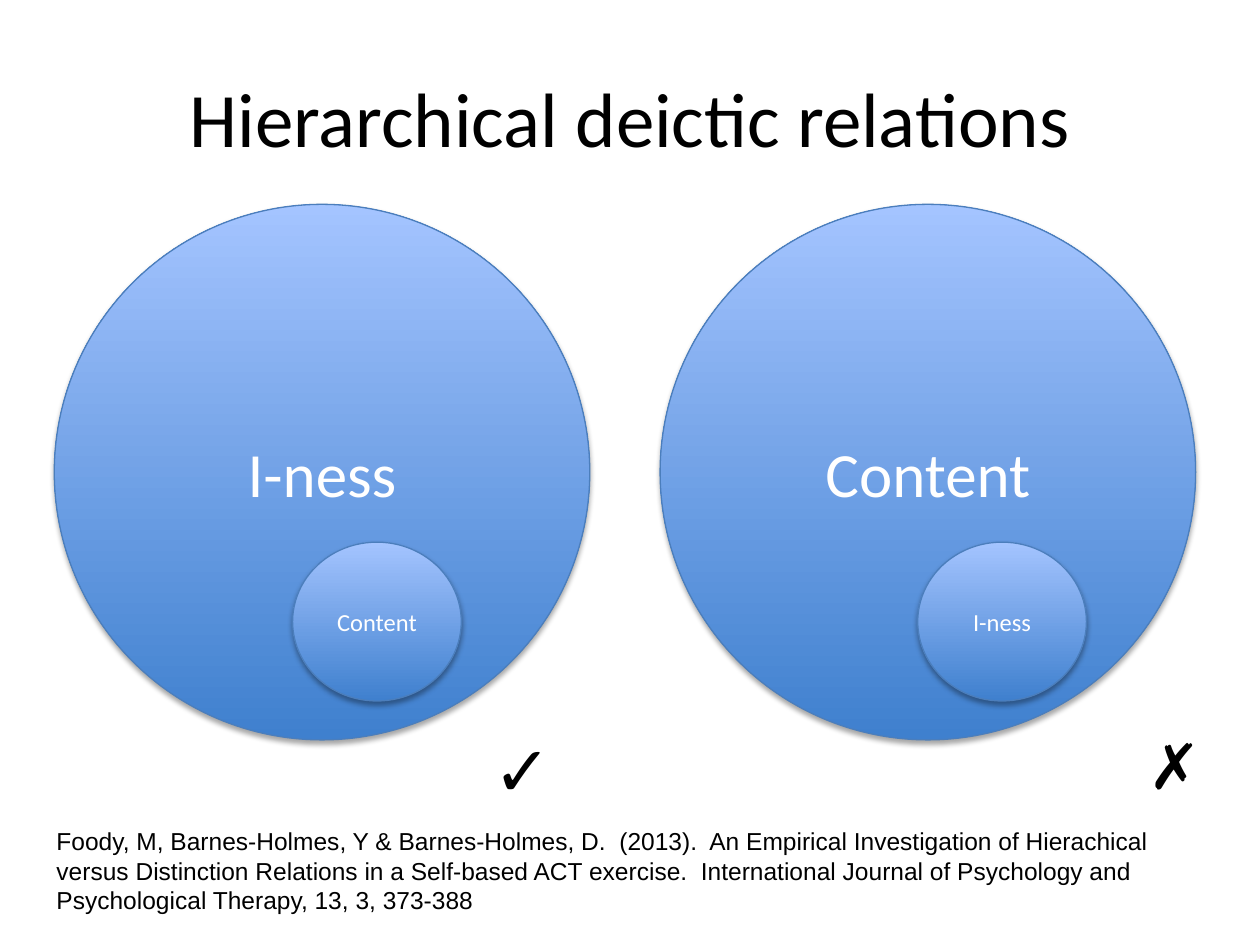
"""Builds the slide on hierarchical deictic relations."""
from lxml import etree
from pptx import Presentation
from pptx.dml.color import RGBColor
from pptx.enum.shapes import MSO_SHAPE
from pptx.enum.text import MSO_ANCHOR, MSO_AUTO_SIZE, PP_ALIGN
from pptx.oxml.ns import qn
from pptx.util import Pt

OVAL = MSO_SHAPE.OVAL
MIDDLE = MSO_ANCHOR.MIDDLE
CENTER = PP_ALIGN.CENTER
LEFT = PP_ALIGN.LEFT
GROW = MSO_AUTO_SIZE.SHAPE_TO_FIT_TEXT
TITLE_ONLY = 5
COLOURS = {
    "text": "000000",
    "label": "FFFFFF",
    "bottom": "3F80CE",
    "top": "A4C4FF",
    "outline": "4B7EBC",
    "shadow": "000000",
}
CITATION = (
    "Foody, M, Barnes-Holmes, Y & Barnes-Holmes, D.  (2013).  "
    "An Empirical Investigation of Hierachical versus Distinction Relations "
    "in a Self-based ACT exercise.  International Journal of Psychology and "
    "Psychological Therapy, 13, 3, 373-388"
)


def colour(name):
    return RGBColor.from_string(COLOURS[name])


def write(frame, text, size, font, ink="text", align=LEFT):
    para = frame.paragraphs[0]
    para.alignment = align
    span = para.add_run()
    span.text = text
    span.font.size = Pt(size)
    span.font.name = font
    span.font.color.rgb = colour(ink)


def add_title(page, text):
    title = page.shapes.title
    title.left, title.top, title.width, title.height = Pt(36), Pt(21.6), Pt(648), Pt(90)
    title.text_frame.vertical_anchor = MIDDLE
    write(title.text_frame, text, 44, "Calibri", align=CENTER)


def add_shadow(shape):
    shape.shadow.inherit = False
    effects = shape._element.spPr.find(qn("a:effectLst"))
    shadow = etree.SubElement(
        effects, qn("a:outerShdw"), blurRad=str(Pt(3.1)), dist=str(Pt(1.8)),
        dir="5400000", rotWithShape="0")
    tint = etree.SubElement(shadow, qn("a:srgbClr"), val=COLOURS["shadow"])
    etree.SubElement(tint, qn("a:alpha"), val="35000")


def add_circle(page, left, top, width, height, text, size):
    circle = page.shapes.add_shape(OVAL, Pt(left), Pt(top), Pt(width), Pt(height))
    circle.fill.gradient()
    circle.fill.gradient_angle = 90
    for stop, name in zip(circle.fill.gradient_stops, ("bottom", "top")):
        stop.color.rgb = colour(name)
    circle.line.color.rgb = colour("outline")
    circle.line.width = Pt(0.75)
    add_shadow(circle)
    circle.text_frame.vertical_anchor = MIDDLE
    write(circle.text_frame, text, size, "Calibri", "label", CENTER)


def add_text(page, left, top, width, height, text, size, wrap=True):
    box = page.shapes.add_textbox(Pt(left), Pt(top), Pt(width), Pt(height))
    box.text_frame.word_wrap = wrap
    box.text_frame.auto_size = GROW
    write(box.text_frame, text, size, "Arial")


def main():
    deck = Presentation()
    deck.slide_width, deck.slide_height = Pt(720), Pt(540)
    page = deck.slides.add_slide(deck.slide_layouts[TITLE_ONLY])
    add_title(page, "Hierarchical deictic relations")
    for left, text in ((31, "I-ness"), (377.2, "Content")):
        add_circle(page, left, 116.8, 306, 306, text, 36)
    for left, text in ((167.2, "Content"), (524.4, "I-ness")):
        add_circle(page, left, 309.8, 96.4, 90.8, text, 14)
    add_text(page, 275, 411.8, 76.3, 55.4, "✓", 40)
    add_text(page, 649.4, 411.8, 36, 51, "✗", 36, wrap=False)
    add_text(page, 25.2, 468.7, 674.6, 58.3, CITATION, 14)
    deck.save("out.pptx")


if __name__ == "__main__":
    main()
